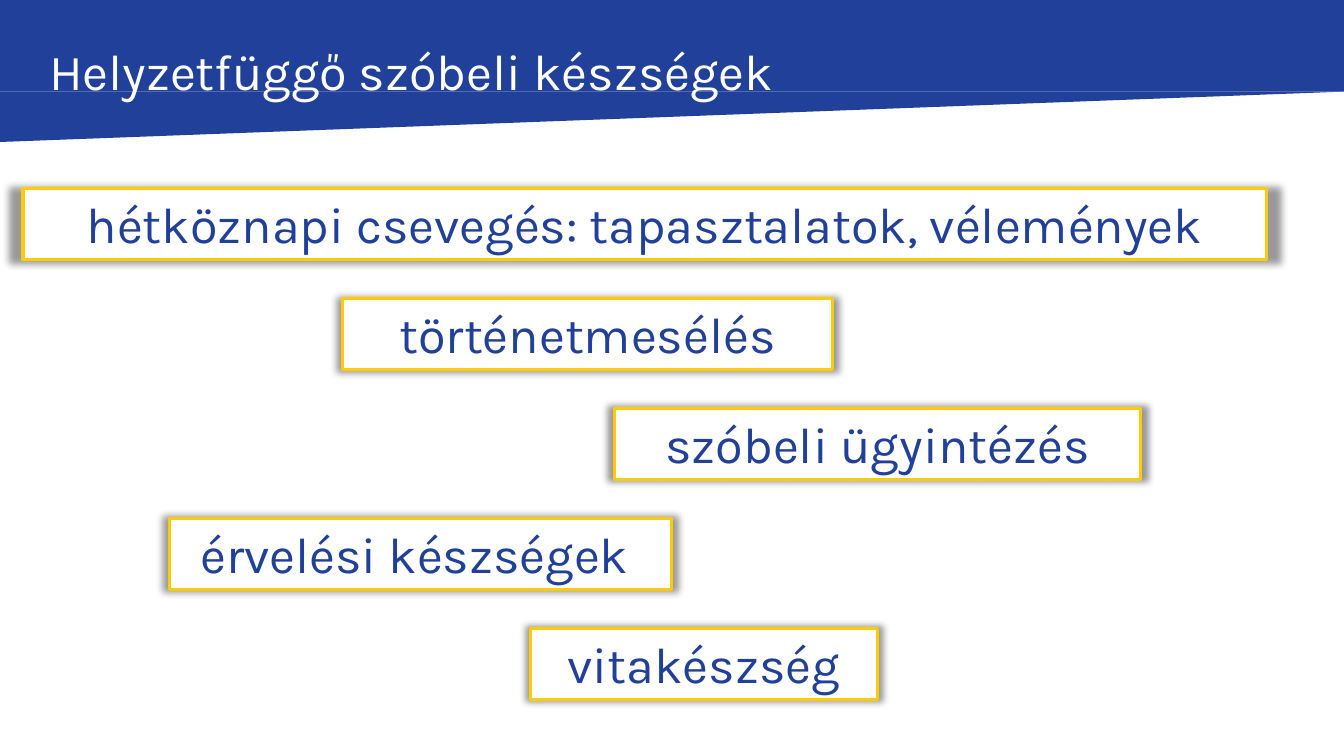
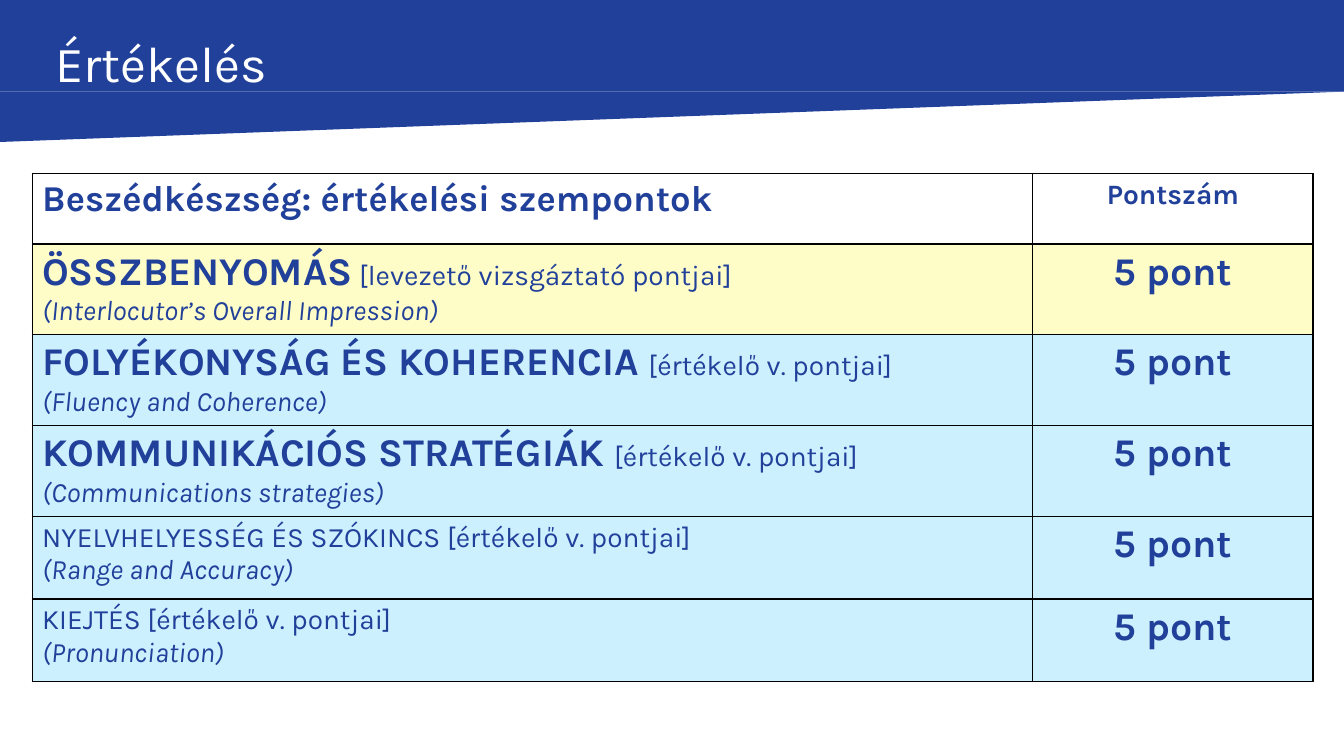
from lxml import etree
from pptx import Presentation
from pptx.dml.color import RGBColor
from pptx.enum import shapes, text
from pptx.oxml import ns
from pptx.util import Cm, Pt

# Shared look
BLUE = RGBColor(0x21, 0x40, 0x9A)
GOLD = RGBColor(0xFF, 0xCB, 0x05)
WHITE = RGBColor(0xFF, 0xFF, 0xFF)
BLACK = RGBColor(0x00, 0x00, 0x00)
CREAM = RGBColor(0xFE, 0xFD, 0xC7)
SKY = RGBColor(0xCD, 0xF0, 0xFF)
FONT = "Karla"
SLIDE_WIDTH, SLIDE_HEIGHT = Cm(33.87), Cm(19.05)
BAND_HEIGHT, SLOPE_HEIGHT = Cm(2.31), Cm(1.27)

TITLE = {"size": Pt(36), "color": WHITE}
SKILL = {"size": Pt(36)}
HEADER = {"size": Pt(26), "bold": True}
SCORE_HEADER = {"size": Pt(20), "bold": True}
STRONG = {"size": Pt(28), "bold": True}
PLAIN = {"size": Pt(20), "bold": False}
ENGLISH = {"size": Pt(20), "bold": False, "italic": True}

# Skill boxes: text, left and width in cm
SKILLS = [
    ("hétköznapi csevegés: tapasztalatok, vélemények", 0.58, 31.34),
    ("történetmesélés", 8.64, 12.34),
    ("szóbeli ügyintézés", 15.49, 13.26),
    ("érvelési készségek ", 4.27, 12.65),
    ("vitakészség", 13.36, 8.76),
]
SKILL_TOP, SKILL_STEP, SKILL_HEIGHT = 4.75, 2.77, 1.8

# Criteria: fill, runs of the first line, English name
CRITERIA = [
    (CREAM, [("ÖSSZBENYOMÁS", STRONG), (" [levezető vizsgáztató pontjai]", PLAIN)],
     "(Interlocutor’s Overall Impression)"),
    (SKY, [("FOLYÉKONYSÁG ÉS KOHERENCIA ", STRONG), ("[értékelő v. pontjai]", PLAIN)],
     "(Fluency and Coherence)"),
    (SKY, [("KOMMUNIKÁCIÓS STRATÉGIÁK ", STRONG), ("[értékelő v. pontjai]", PLAIN)],
     "(Communications strategies)"),
    (SKY, [("NYELVHELYESSÉG ÉS SZÓKINCS [értékelő v. pontjai]", PLAIN)],
     "(Range and Accuracy)"),
    (SKY, [("KIEJTÉS [értékelő v. pontjai]", PLAIN)], "(Pronunciation)"),
]


def add_xml(parent, tag, **attributes):
    element = etree.SubElement(parent, ns.qn(tag))
    for name, value in attributes.items():
        element.set(name, str(value))
    return element


def add_run(paragraph, content, style):
    run = paragraph.add_run()
    run.text = content
    values = {"name": FONT, "color": BLUE, **style}
    run.font.color.rgb = values.pop("color")
    for name, value in values.items():
        setattr(run.font, name, value)


def write_lines(frame, lines, alignment=text.PP_ALIGN.LEFT):
    """Each line is a list of (text, style) runs."""
    for index, runs in enumerate(lines):
        paragraph = frame.add_paragraph() if index else frame.paragraphs[0]
        paragraph.alignment = alignment
        for content, style in runs:
            add_run(paragraph, content, style)


def add_band_part(slide, kind, top, height):
    shape = slide.shapes.add_shape(kind, 0, top, SLIDE_WIDTH, height)
    shape.shadow.inherit = False
    shape.fill.solid()
    shape.fill.fore_color.rgb = BLUE
    shape.line.fill.background()
    return shape


def add_titled_slide(presentation, title, left, top, width, height):
    slide = presentation.slides.add_slide(presentation.slide_layouts[6])
    # Sloping band
    slope = add_band_part(slide, shapes.MSO_SHAPE.RIGHT_TRIANGLE, BAND_HEIGHT, SLOPE_HEIGHT)
    slope.element.spPr.find(ns.qn("a:xfrm")).set("flipV", "1")
    add_band_part(slide, shapes.MSO_SHAPE.RECTANGLE, 0, BAND_HEIGHT)
    # Title
    frame = slide.shapes.add_textbox(Cm(left), Cm(top), Cm(width), Cm(height)).text_frame
    frame.word_wrap = True
    frame.vertical_anchor = text.MSO_ANCHOR.MIDDLE
    write_lines(frame, [[(title, TITLE)]])
    frame.paragraphs[0].line_spacing = 0.9
    return slide


def add_glow_shadow(shape):
    effects = add_xml(shape.element.spPr, "a:effectLst")
    shadow = add_xml(effects, "a:outerShdw", blurRad=Pt(5), sx=102000, sy=102000,
                     algn="ctr", rotWithShape=0)
    color = add_xml(shadow, "a:srgbClr", val=BLACK)
    add_xml(color, "a:alpha", val=40000)


def add_skill_box(slide, content, left, top, width):
    shape = slide.shapes.add_shape(shapes.MSO_SHAPE.RECTANGLE, Cm(left), Cm(top),
                                   Cm(width), Cm(SKILL_HEIGHT))
    shape.fill.solid()
    shape.fill.fore_color.rgb = WHITE
    shape.line.color.rgb = GOLD
    shape.line.width = Pt(2.25)
    add_glow_shadow(shape)
    frame = shape.text_frame
    frame.word_wrap = True
    frame.auto_size = text.MSO_AUTO_SIZE.SHAPE_TO_FIT_TEXT
    frame.vertical_anchor = text.MSO_ANCHOR.TOP
    write_lines(frame, [[(content, SKILL)]], text.PP_ALIGN.CENTER)


def fill_cell(cell, lines, fill, alignment=text.PP_ALIGN.LEFT):
    properties = cell._tc.get_or_add_tcPr()
    for side in ("L", "R", "T", "B"):
        line = add_xml(properties, f"a:ln{side}", w=Pt(1))
        add_xml(add_xml(line, "a:solidFill"), "a:srgbClr", val=BLACK)
    if fill is None:
        cell.fill.background()
    else:
        cell.fill.solid()
        cell.fill.fore_color.rgb = fill
    write_lines(cell.text_frame, lines, alignment)


def add_criteria_table(slide):
    widths = [25.22, 7.06]
    heights = [1.78] + [2.08] * len(CRITERIA)
    table = slide.shapes.add_table(len(heights), len(widths), Cm(0.81), Cm(4.37),
                                   Cm(sum(widths)), Cm(sum(heights))).table
    table.first_row = table.horz_banding = False
    for column, width in zip(table.columns, widths):
        column.width = Cm(width)
    for row, height in zip(table.rows, heights):
        row.height = Cm(height)

    rows = [(None, [[("Beszédkészség: értékelési szempontok", HEADER)]],
             ("Pontszám", SCORE_HEADER))]
    rows += [(fill, [runs, [(english, ENGLISH)]], ("5 pont", STRONG))
             for fill, runs, english in CRITERIA]
    for index, (fill, lines, score) in enumerate(rows):
        fill_cell(table.cell(index, 0), lines, fill)
        fill_cell(table.cell(index, 1), [[score]], fill, text.PP_ALIGN.CENTER)


def main():
    presentation = Presentation()
    presentation.slide_width, presentation.slide_height = SLIDE_WIDTH, SLIDE_HEIGHT

    # Speaking skills
    slide = add_titled_slide(presentation, "Helyzetfüggő szóbeli készségek",
                             0.99, 0.74, 30.56, 2.26)
    for index, (content, left, width) in enumerate(SKILLS):
        add_skill_box(slide, content, left, SKILL_TOP + index * SKILL_STEP, width)

    # Assessment
    slide = add_titled_slide(presentation, "Értékelés", 1.14, 0.74, 29.21, 1.85)
    add_criteria_table(slide)

    presentation.save("out.pptx")


if __name__ == "__main__":
    main()
